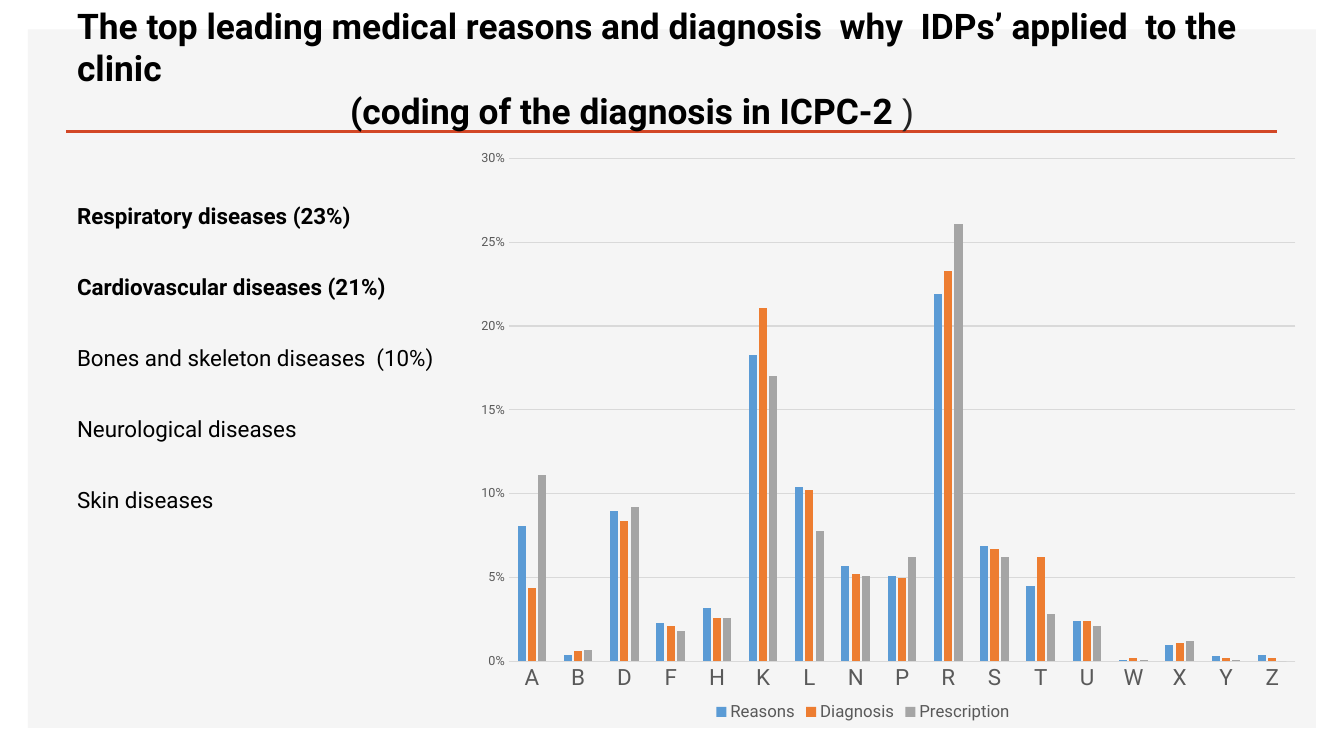
from dataclasses import dataclass

from lxml import etree
from pptx import Presentation
from pptx import util as u
from pptx.chart.data import CategoryChartData
from pptx.dml.color import RGBColor
from pptx.enum import chart as ch
from pptx.enum import shapes, text
from pptx.oxml import parse_xml
from pptx.oxml.ns import nsdecls, qn

Pt = u.Pt


@dataclass(frozen=True)
class Theme:
    font: str = "Roboto"
    alt_font: str = "Arial"
    panel: str = "F5F5F5"
    accent: str = "D24726"
    ink: str = "000000"
    soft_ink: str = "222222"
    label: str = "595959"
    grid: str = "D9D9D9"
    series: tuple = ("5B9BD5", "ED7D31", "A5A5A5")
    title_size: float = 25.2
    body_size: float = 16
    category_size: float = 16
    legend_size: float = 12
    value_size: float = 9


def rgb(value):
    return RGBColor.from_string(value)


class SlideBuilder:
    def __init__(self, slide, theme):
        self.slide = slide
        self.theme = theme

    def style(self, font, size, color, bold=False, name=None):
        font.name = name or self.theme.font
        font.size = Pt(size)
        font.color.rgb = rgb(color)
        font.bold = bold

    def panel(self, x, y, w, h):
        sp = self.slide.shapes.add_shape(
            shapes.MSO_SHAPE.RECTANGLE, Pt(x), Pt(y), Pt(w), Pt(h))
        sp.shadow.inherit = False
        sp.fill.solid()
        sp.fill.fore_color.rgb = rgb(self.theme.panel)
        sp.line.fill.background()

    def rule(self, x1, x2, y):
        line = self.slide.shapes.add_connector(
            shapes.MSO_CONNECTOR.STRAIGHT, Pt(x1), Pt(y), Pt(x2), Pt(y))
        line.line.color.rgb = rgb(self.theme.accent)
        line.line.width = Pt(2)
        etree.SubElement(line._element.spPr, qn("a:effectLst"))

    def text_frame(self, x, y, w, h, inset_y):
        sp = self.slide.shapes.add_textbox(Pt(x), Pt(y), Pt(w), Pt(h))
        tf = sp.text_frame
        tf.word_wrap = True
        tf.vertical_anchor = text.MSO_ANCHOR.TOP
        tf.margin_top = tf.margin_bottom = Pt(inset_y)
        return tf

    def title(self, x, y, w, h, heading, subheading, closing, indent):
        t = self.theme
        tf = self.text_frame(x, y, w, h, 0)
        tf.text = heading
        p = tf.add_paragraph()
        p.text = subheading
        p._p.get_or_add_pPr().set("marL", str(Pt(indent)))
        for r in (tf.paragraphs[0].runs[0], p.runs[0]):
            self.style(r.font, t.title_size, t.ink, True)
        r = p.add_run()
        r.text = closing
        self.style(r.font, t.title_size, t.soft_ink, name=t.alt_font)

    def topics(self, x, y, w, h, items, bold_count):
        tf = self.text_frame(x, y, w, h, 3.6)
        tf.text = "\n".join(items)
        for i, p in enumerate(tf.paragraphs):
            p.line_spacing = 1.5
            p.space_before = Pt(10 if i else 0)
            p.space_after = Pt(12)
            self.style(p.runs[0].font, self.theme.body_size,
                       self.theme.ink, i < bold_count)

    def column_chart(self, x, y, w, h, categories, series, plot_area):
        t = self.theme
        data = CategoryChartData(number_format="0.0%")
        data.categories = categories
        for name, values in series.items():
            data.add_series(name, [v / 100 for v in values])
        chart = self.slide.shapes.add_chart(
            ch.XL_CHART_TYPE.COLUMN_CLUSTERED,
            Pt(x), Pt(y), Pt(w), Pt(h), data).chart
        chart.has_title = False
        self.style(chart.font, 10, t.ink)

        plot = chart.plots[0]
        plot.vary_by_categories = False
        plot.gap_width = 219
        plot.overlap = -27
        for ser, color in zip(plot.series, t.series):
            ser.format.fill.solid()
            ser.format.fill.fore_color.rgb = rgb(color)

        cat, val = chart.category_axis, chart.value_axis
        for axis, size in ((cat, t.category_size), (val, t.value_size)):
            axis.major_tick_mark = axis.minor_tick_mark = ch.XL_TICK_MARK.NONE
            self.style(axis.tick_labels.font, size, t.label)
        val.minimum_scale, val.maximum_scale, val.major_unit = 0, 0.3, 0.05
        val.tick_labels.number_format = "0%"
        val.tick_labels.number_format_is_linked = False
        val.format.line.fill.background()
        val.has_major_gridlines = True
        for line in (cat.format.line, val.major_gridlines.format.line):
            line.color.rgb = rgb(t.grid)
            line.width = Pt(0.75)

        chart.has_legend = True
        chart.legend.position = ch.XL_LEGEND_POSITION.BOTTOM
        chart.legend.include_in_layout = False
        self.style(chart.legend.font, t.legend_size, t.label)
        self.place_plot(chart, plot_area)

    def place_plot(self, chart, plot_area):
        area = chart._chartSpace.chart.plotArea
        for old in area.findall(qn("c:layout")):
            area.remove(old)
        modes = "".join(f'<c:{a}Mode val="edge"/>' for a in "xy")
        sizes = "".join(f'<c:{a} val="{v}"/>' for a, v in zip("xywh", plot_area))
        area.insert(0, parse_xml(
            f'<c:layout {nsdecls("c")}><c:manualLayout>'
            f'<c:layoutTarget val="inner"/>{modes}{sizes}'
            '</c:manualLayout></c:layout>'))


TOPICS = [
    "Respiratory diseases (23%)",
    "Cardiovascular diseases (21%)",
    "Bones and skeleton diseases  (10%)",
    "Neurological diseases",
    "Skin diseases",
]
ICPC_PERCENT = {
    "Reasons": [8.1, 0.4, 9, 2.3, 3.2, 18.3, 10.4, 5.7, 5.1,
                21.9, 6.9, 4.5, 2.4, 0.1, 1, 0.3, 0.4],
    "Diagnosis": [4.4, 0.6, 8.4, 2.1, 2.6, 21.1, 10.2, 5.2, 5,
                  23.3, 6.7, 6.2, 2.4, 0.2, 1.1, 0.2, 0.2],
    "Prescription": [11.1, 0.7, 9.2, 1.8, 2.6, 17, 7.8, 5.1, 6.2,
                     26.1, 6.2, 2.8, 2.1, 0.1, 1.2, 0.1, 0],
}


def main():
    prs = Presentation()
    prs.slide_width, prs.slide_height = Pt(960), Pt(540)
    s = SlideBuilder(prs.slides.add_slide(prs.slide_layouts[6]), Theme())
    s.panel(20, 21, 920, 499)
    s.rule(47.5, 912, 94)
    s.title(48, 3, 891, 90,
            "The top leading medical reasons and diagnosis  why  IDPs’ applied"
            "  to the clinic",
            "(coding of the diagnosis in ICPC-2 ", ")", 195)
    s.topics(48, 131, 284, 351, TOPICS, 2)
    s.column_chart(304, 101, 625, 417.5, list("ABDFHKLNPRSTUWXYZ"),
                   ICPC_PERCENT, (0.095, 0.029, 0.899, 0.861))
    prs.save("out.pptx")


if __name__ == "__main__":
    main()
